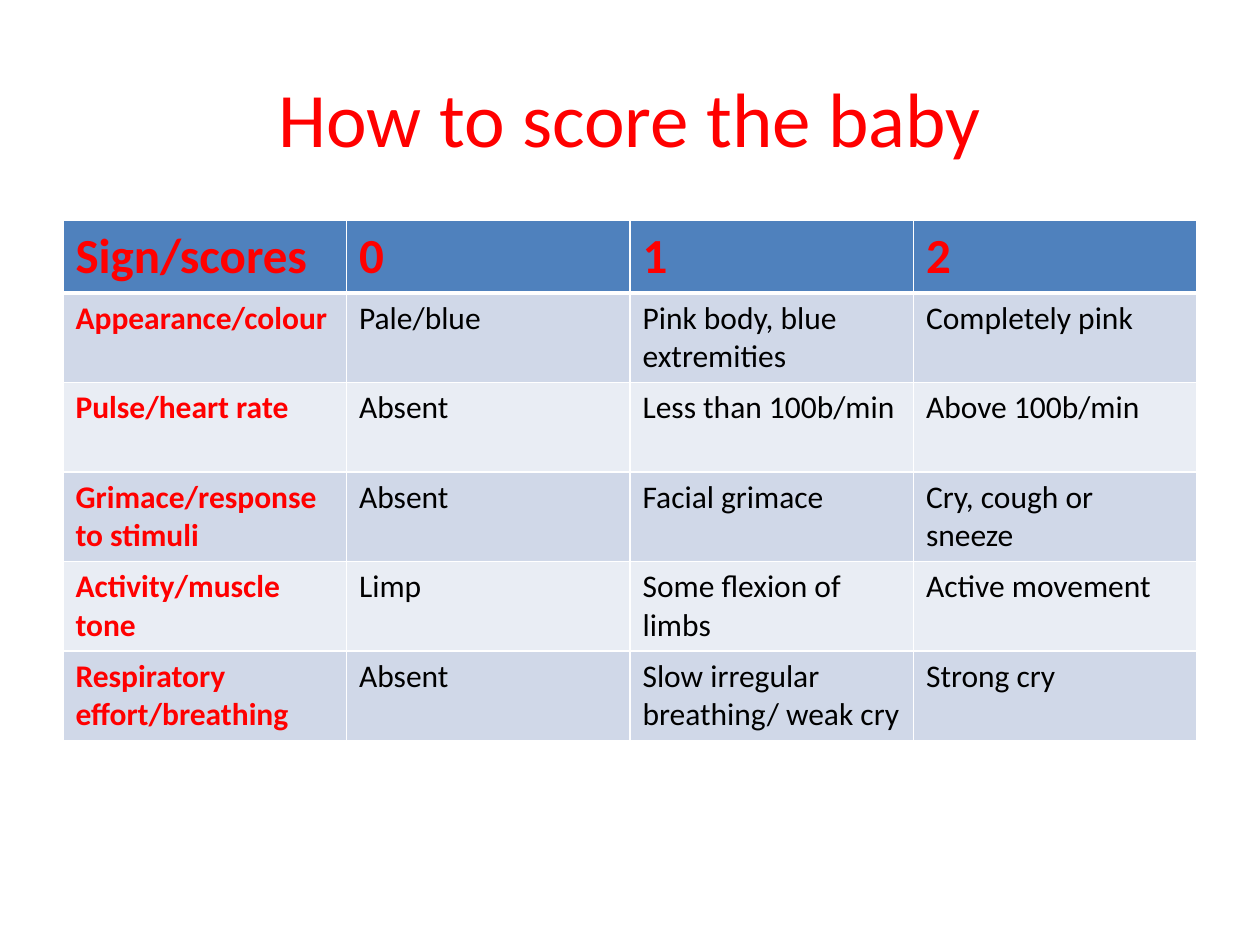
"""Build a slide with a table for scoring a newborn baby."""
from lxml import etree
from pptx import Presentation
from pptx.dml.color import RGBColor
from pptx.enum.text import MSO_ANCHOR, PP_ALIGN
from pptx.oxml.ns import qn
from pptx.util import Pt

CENTER = PP_ALIGN.CENTER
MIDDLE = MSO_ANCHOR.MIDDLE
RED = RGBColor(0xFF, 0x00, 0x00)
BLACK = RGBColor(0x00, 0x00, 0x00)
WHITE = RGBColor(0xFF, 0xFF, 0xFF)
HEADER_BLUE = RGBColor(0x4F, 0x81, 0xBD)
BANDS = [RGBColor(0xE9, 0xED, 0xF4), RGBColor(0xD0, 0xD8, 0xE8)]
FONT = "Calibri"
SCORES = [
    ["Sign/scores", "0", "1", "2"],
    ["Appearance/colour", "Pale/blue", "Pink body, blue extremities", "Completely pink"],
    ["Pulse/heart rate", "Absent", "Less than 100b/min", "Above 100b/min"],
    ["Grimace/response to stimuli", "Absent", "Facial grimace", "Cry, cough or sneeze"],
    ["Activity/muscle tone", "Limp", "Some flexion of limbs", "Active movement"],
    ["Respiratory effort/breathing", "Absent", "Slow irregular breathing/ weak cry", "Strong cry"],
]
HEADER_HEIGHT, BODY_HEIGHT = 40.8, 51.15


def add_span(para, text, size, color, bold=False):
    span = para.add_run()
    span.text = text
    span.font.name = FONT
    span.font.size = Pt(size)
    span.font.bold = bold
    span.font.color.rgb = color


def set_border(cell, side, width):
    line = etree.Element(qn(f"a:{side}"), w=str(Pt(width)))
    fill = etree.SubElement(line, qn("a:solidFill"))
    etree.SubElement(fill, qn("a:srgbClr"), val=str(WHITE))
    return line


deck = Presentation()
deck.slide_width, deck.slide_height = Pt(720), Pt(540)
page = deck.slides.add_slide(deck.slide_layouts[5])
page.background.fill.solid()
page.background.fill.fore_color.rgb = WHITE

title = page.shapes.title
title.left, title.top, title.width, title.height = Pt(36), Pt(21.6), Pt(648), Pt(90)
title.text_frame.vertical_anchor = MIDDLE
title_para = title.text_frame.paragraphs[0]
title_para.alignment = CENTER
add_span(title_para, "How to score the baby", 44, RED)

table_height = HEADER_HEIGHT + BODY_HEIGHT * (len(SCORES) - 1)
table = page.shapes.add_table(
    len(SCORES), len(SCORES[0]), Pt(36), Pt(126), Pt(648), Pt(table_height)
).table

for row_index, row in enumerate(SCORES):
    is_header = row_index == 0
    table.rows[row_index].height = Pt(HEADER_HEIGHT if is_header else BODY_HEIGHT)
    for column_index, text in enumerate(row):
        is_label = is_header or column_index == 0
        cell = table.cell(row_index, column_index)
        add_span(cell.text_frame.paragraphs[0], text, 28 if is_header else 18,
                 RED if is_label else BLACK, is_label)
        cell.fill.solid()
        cell.fill.fore_color.rgb = HEADER_BLUE if is_header else BANDS[row_index % 2]
        widths = {"lnL": 1, "lnR": 1, "lnT": 3 if row_index == 1 else 1,
                  "lnB": 3 if is_header else 1}
        for position, (side, width) in enumerate(widths.items()):
            cell._tc.tcPr.insert(position, set_border(cell, side, width))

deck.save("out.pptx")
